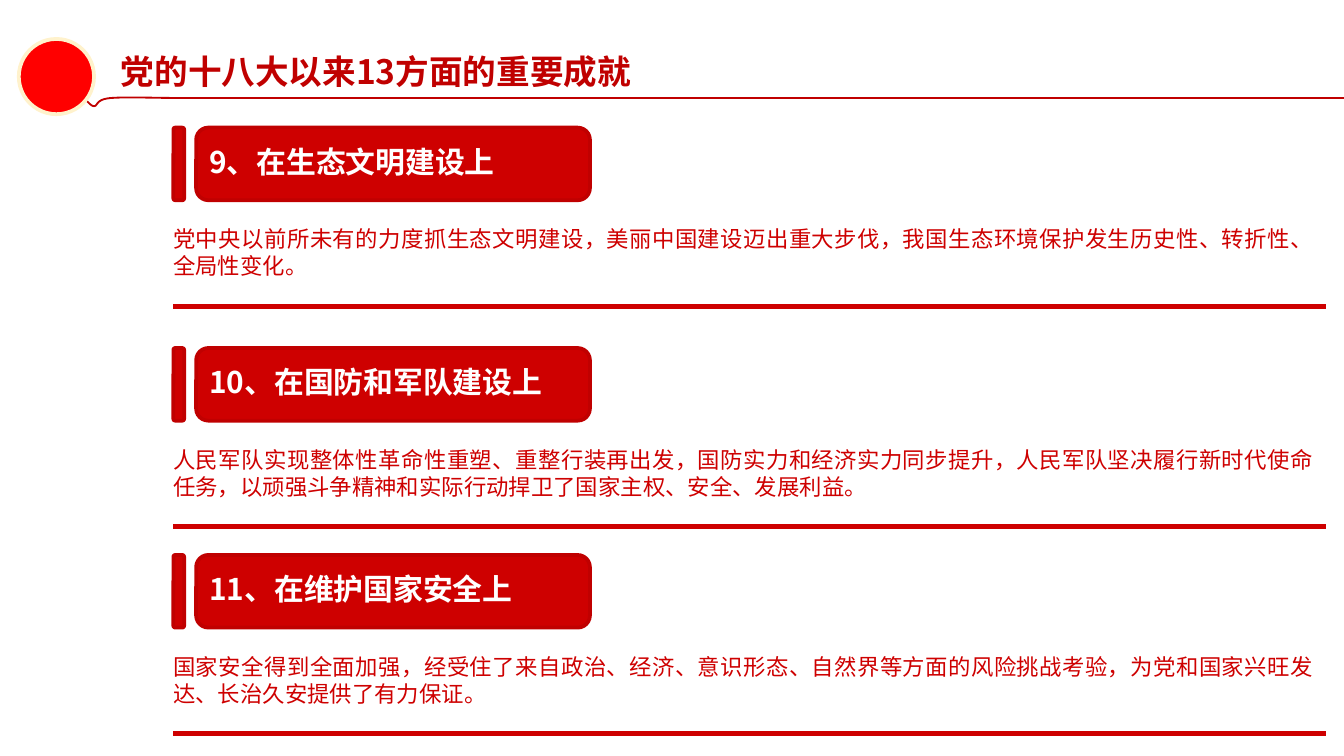
from pptx import Presentation, util as u
from pptx.dml.color import RGBColor
from pptx.enum import shapes, text
from pptx.oxml.ns import qn
from lxml import etree

RED = RGBColor(0xCE, 0, 0)
DARK = RGBColor(0xC0, 0, 0)
SUN = RGBColor(0xFF, 0, 0)
CREAM = RGBColor(0xFF, 0xF2, 0xCC)
WHITE = RGBColor(0xFF, 0xFF, 0xFF)
FACE = "Noto Sans CJK SC"

deck = Presentation()
deck.slide_width = u.Inches(10)
deck.slide_height = deck.slide_width * 9 // 16
slide = deck.slides.add_slide(deck.slide_layouts[6])
parts = slide.shapes
unit = deck.slide_width / 100  # grid of 100 columns, rows of equal size


def block(kind, box, fill, edge):
    shape = parts.add_shape(kind, *[round(n * unit) for n in box])
    shape.shadow.inherit = False
    shape.fill.solid()
    shape.fill.fore_color.rgb = fill
    shape.line.color.rgb = edge
    shape.line.width = u.Pt(2)


def write(box, words, size, tint, bold=False, align=None):
    frame = parts.add_textbox(*[round(n * unit) for n in box]).text_frame
    frame.word_wrap = True
    frame.auto_size = text.MSO_AUTO_SIZE.SHAPE_TO_FIT_TEXT
    frame.text = words
    para = frame.paragraphs[0]
    para.alignment = align
    font = para.runs[0].font
    font.size, font.bold, font.name = u.Pt(size), bold, FACE
    font.color.rgb = tint
    etree.SubElement(para.runs[0]._r.rPr, qn("a:ea"), typeface=FACE)
    return frame


# Wavy string from the sun to the header rule: Bezier arcs in hundredths of an inch
start = (36, 77)
arcs = [
    [(40, 76), (44, 71), (48, 72)],
    [(53, 72), (49, 77), (53, 78)],
    [(57, 79), (59, 74), (62, 74)],
    [(65, 74), (67, 79), (70, 79)],
    [(73, 79), (71, 74), (82, 73)],
    [(93, 72), (123, 73), (134, 73)],
]
fine = 100  # steps per hundredth, so that the curve stays smooth
dots, last = [], start
for arc in arcs:
    for step in range(1, 13):
        t = step / 12
        mix = ((1 - t) ** 3, 3 * t * (1 - t) ** 2, 3 * t * t * (1 - t), t ** 3)
        dots.append([fine * sum(m * p[k] for m, p in zip(mix, [last] + arc)) for k in (0, 1)])
    last = arc[-1]
pen = parts.build_freeform(*[fine * n for n in start], scale=unit / 10 / fine)
pen.add_line_segments(dots, close=False)
wave = pen.convert_to_shape()
wave.shadow.inherit = False
wave.fill.background()
wave.line.color.rgb = DARK
wave.line.width = u.Pt(1)

# Sun and title
block(shapes.MSO_SHAPE.OVAL, (1.4, 2.9, 5.6, 5.6), SUN, CREAM)
title = write((7.8, 3.4, 58, 3.7), "党的十八大以来13方面的重要成就", 18, DARK, True)
title.margin_left, title.margin_right = u.Inches(0.12), u.Inches(0.07)
title.margin_top = title.margin_bottom = u.Inches(0.04)

# Sections: top row, heading, body
items = [
    (9.5, "9、在生态文明建设上",
     "党中央以前所未有的力度抓生态文明建设，美丽中国建设迈出重大步伐，"
     "我国生态环境保护发生历史性、转折性、全局性变化。"),
    (25.9, "10、在国防和军队建设上",
     "人民军队实现整体性革命性重塑、重整行装再出发，国防实力和经济实力同步提升，"
     "人民军队坚决履行新时代使命任务，以顽强斗争精神和实际行动捍卫了国家主权、安全、发展利益。"),
    (41.3, "11、在维护国家安全上",
     "国家安全得到全面加强，经受住了来自政治、经济、意识形态、自然界等方面的风险挑战考验，"
     "为党和国家兴旺发达、长治久安提供了有力保证。"),
]
rules = [(13.4, 100, 7.3, DARK, 1)]
for top, head, body in items:
    for left, wide in ((12.9, 0.8), (14.6, 29.3)):
        block(shapes.MSO_SHAPE.ROUNDED_RECTANGLE, (left, top, wide, 5.4), RED, DARK)
    write((14.6, top + 0.7, 29.3, 3.7), head, 16, WHITE, True)
    write((11.9, top + 6.8, 86.9, 5), body, 12, RED, align=text.PP_ALIGN.JUSTIFY)
    rules.append((12.9, 98.7, top + 13.3, RED, 2.5))

# Header rule and section rules
for left, right, row, tint, thick in rules:
    ends = [round(n * unit) for n in (left, row, right, row)]
    rule = parts.add_connector(shapes.MSO_CONNECTOR.STRAIGHT, *ends)
    rule.line.color.rgb = tint
    rule.line.width = u.Pt(thick)
    etree.SubElement(rule._element.spPr, qn("a:effectLst"))

deck.save("out.pptx")
